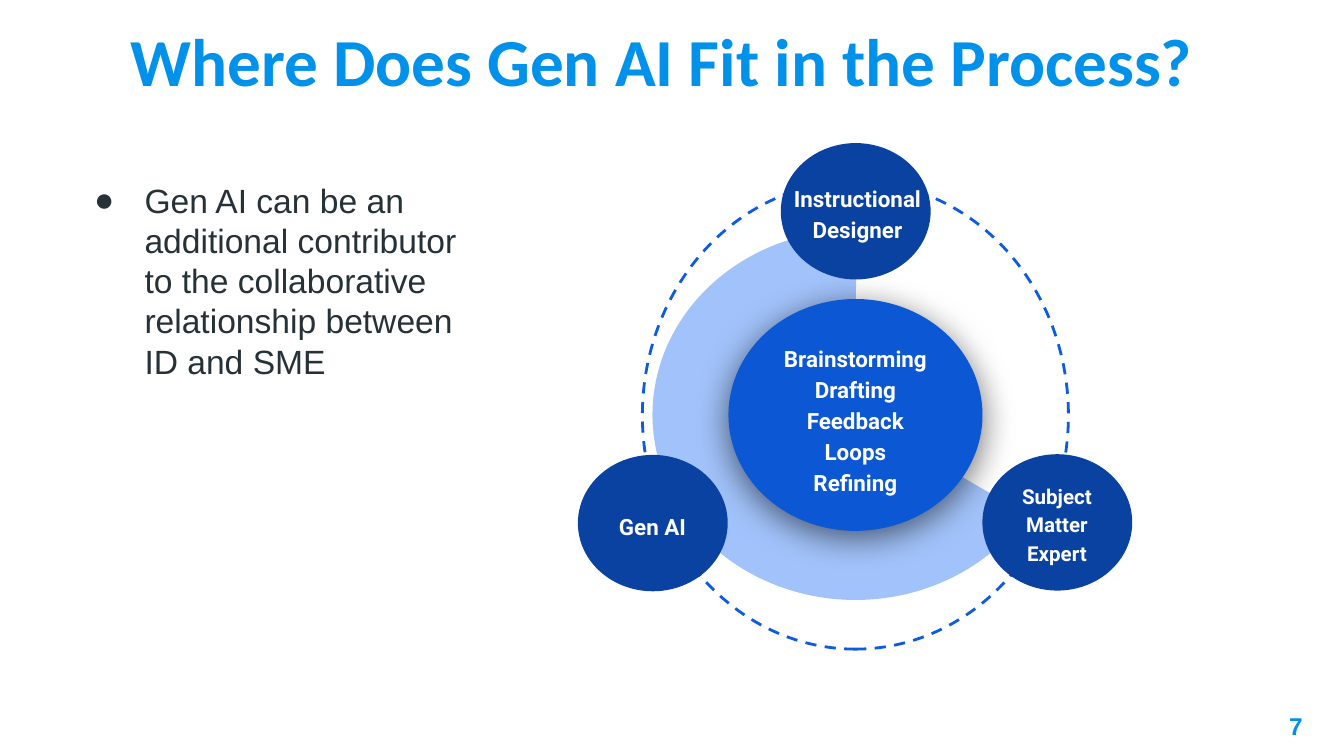
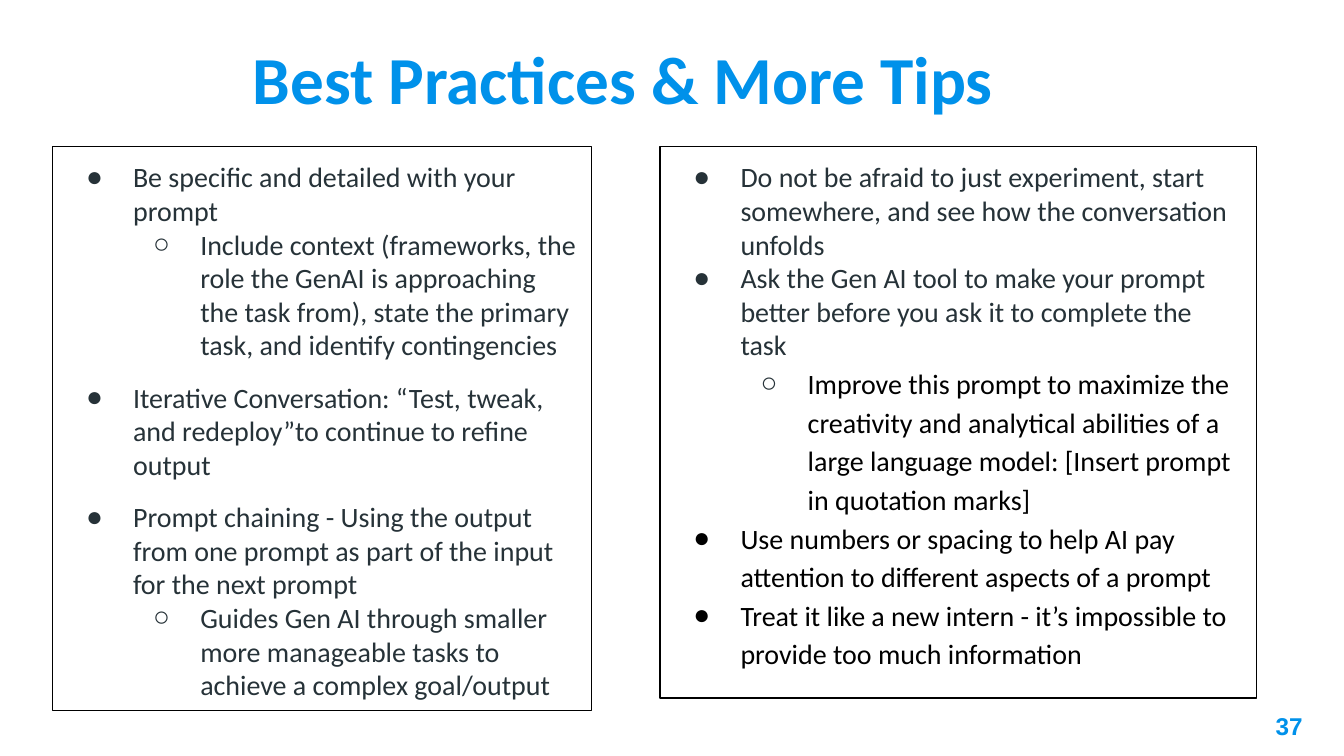
"""Build two slides on working with generative AI: its place in the process, and prompting tips."""

import dataclasses
import typing

import lxml.etree
import pptx
import pptx.dml.color
import pptx.enum.dml
import pptx.enum.shapes
import pptx.enum.text
import pptx.oxml.ns
import pptx.shapes.autoshape
import pptx.slide
import pptx.text.text
import pptx.util

PX = 4572
SLIDE_SIZE = (2000, 1125)
INSET = 20
INDENT = 100
PAGE_NUMBER_BOX = (1838, 1039, 120, 86)
BULLET_FONT = "Arial"
COLORS = {
    "accent": "0091EA",
    "ink": "263238",
    "black": "000000",
    "white": "FFFFFF",
    "ring": "0D5CDF",
    "arc": "A1C2FA",
    "hub": "0C57D3",
    "contributor": "0942A1",
}

Box = tuple[int, int, int, int]
Align = pptx.enum.text.PP_ALIGN
Anchor = pptx.enum.text.MSO_ANCHOR
Preset = pptx.enum.shapes.MSO_SHAPE


@dataclasses.dataclass(frozen=True)
class Item:
    text: str
    level: int = 0
    color: str = "ink"
    bullet: str = ""
    bullet_color: str = "ink"
    spacing: float = 1.0
    before: int = 0


@dataclasses.dataclass(frozen=True)
class Contributor:
    name: str
    circle: tuple[int, int]
    label: Box
    size: int = 12


@dataclasses.dataclass(frozen=True)
class Column:
    box: Box
    tips: tuple[Item, ...]


CONTRIBUTOR_SIZE = (223, 203)
CONTRIBUTORS = (
    Contributor("Instructional Designer", (1162, 213), (1155, 242, 242, 148)),
    Contributor("Gen AI", (860, 677), (892, 710, 158, 140)),
    Contributor("Subject Matter Expert", (1462, 676), (1487, 708, 172, 140), 11),
)
ACTIVITIES = ("Brainstorming", "Drafting", "Feedback Loops", "Refining")
ROLE = Item(
    "Gen AI can be an additional contributor to the collaborative "
    "relationship between ID and SME",
    bullet="●",
)
COLUMNS = (
    Column((78, 218, 802, 839), (
        Item("Be specific and detailed with your prompt", bullet="●"),
        Item("Include context (frameworks, the role the GenAI is approaching the task from), "
             "state the primary task, and identify contingencies", level=1, bullet="○"),
        Item("Iterative Conversation: “Test, tweak, and redeploy”to continue to refine output",
             bullet="●", before=10),
        Item("Prompt chaining - Using the output from one prompt as part of the input "
             "for the next prompt", bullet="●", before=10),
        Item("Guides Gen AI through smaller more manageable tasks to achieve "
             "a complex goal/output", level=1, bullet="○"),
    )),
    Column((982, 218, 888, 821), (
        Item("Do not be afraid to just experiment, start somewhere, and see how "
             "the conversation unfolds", bullet="●"),
        Item("Ask the Gen AI tool to make your prompt better before you ask it "
             "to complete the task", bullet="●"),
        Item("Improve this prompt to maximize the creativity and analytical abilities of "
             "a large language model: [Insert prompt in quotation marks]",
             level=1, color="black", bullet="○", spacing=1.15),
        Item("Use numbers or spacing to help AI pay attention to different aspects of a prompt",
             color="black", bullet="●", bullet_color="black", spacing=1.15),
        Item("Treat it like a new intern - it’s impossible to provide too much information",
             color="black", bullet="●", bullet_color="black", spacing=1.15),
    )),
)


def rgb(color: str) -> pptx.dml.color.RGBColor:
    return pptx.dml.color.RGBColor.from_string(COLORS[color])


def emu(lengths: typing.Iterable[int]) -> list[int]:
    return [length * PX for length in lengths]


def add_element(parent: typing.Any, tag: str, **attributes: str) -> typing.Any:
    return lxml.etree.SubElement(parent, pptx.oxml.ns.qn(tag), attributes)


def set_bullet(paragraph: pptx.text.text._Paragraph, item: Item, hanging: int) -> None:
    properties = paragraph._p.get_or_add_pPr()
    properties.set("marL", str(INDENT * (item.level + 1) * PX))
    properties.set("indent", str(-hanging * PX))
    bullet_color = add_element(properties, "a:buClr")
    add_element(bullet_color, "a:srgbClr", val=COLORS[item.bullet_color])
    add_element(properties, "a:buFont", typeface=BULLET_FONT)
    add_element(properties, "a:buChar", char=item.bullet)


def write_text(
    frame: pptx.text.text.TextFrame,
    items: typing.Iterable[Item],
    *,
    size: int,
    font: str,
    bold: bool = False,
    align: Align = Align.LEFT,
    anchor: Anchor = Anchor.TOP,
    hanging: int = 70,
) -> None:
    frame.word_wrap = True
    frame.auto_size = pptx.enum.text.MSO_AUTO_SIZE.NONE
    frame.vertical_anchor = anchor
    frame.margin_left = frame.margin_right = INSET * PX
    frame.margin_top = frame.margin_bottom = INSET * PX
    for index, item in enumerate(items):
        paragraph = frame.add_paragraph() if index else frame.paragraphs[0]
        paragraph.level = item.level
        if item.bullet:
            set_bullet(paragraph, item, hanging)
        paragraph.alignment = align
        paragraph.line_spacing = item.spacing
        paragraph.space_before = pptx.util.Pt(item.before)
        run = paragraph.add_run()
        run.text = item.text
        run.font.size = pptx.util.Pt(size)
        run.font.name = font
        run.font.bold = bold
        run.font.color.rgb = rgb(item.color)


def place(shape: typing.Any, box: Box) -> None:
    shape.left, shape.top, shape.width, shape.height = emu(box)


def add_titled_slide(
    deck: typing.Any, layout: int, title: str, title_box: Box, number: int
) -> pptx.slide.Slide:
    slide = deck.slides.add_slide(deck.slide_layouts[layout])
    place(slide.shapes.title, title_box)
    write_text(slide.shapes.title.text_frame, [Item(title, color="accent")],
               size=36, font="Calibri", bold=True, anchor=Anchor.BOTTOM)
    page_number = slide.shapes.add_textbox(*emu(PAGE_NUMBER_BOX))
    write_text(page_number.text_frame, [Item(str(number), color="accent")],
               size=13, font="Arial", bold=True, align=Align.RIGHT)
    return slide


def add_figure(
    slide: pptx.slide.Slide, preset: Preset, box: Box, fill: str | None = None
) -> pptx.shapes.autoshape.Shape:
    figure = slide.shapes.add_shape(preset, *emu(box))
    figure.shadow.inherit = False
    figure.line.fill.background()
    if fill:
        figure.fill.solid()
        figure.fill.fore_color.rgb = rgb(fill)
    else:
        figure.fill.background()
    return figure


def add_label(slide: pptx.slide.Slide, box: Box, lines: typing.Iterable[str], size: int) -> None:
    label = slide.shapes.add_textbox(*emu(box))
    write_text(label.text_frame, [Item(line, color="white", spacing=1.15) for line in lines],
               size=size, font="Roboto", bold=True, align=Align.CENTER, anchor=Anchor.MIDDLE)


def cast_shadow(figure: pptx.shapes.autoshape.Shape) -> None:
    effects = figure._element.spPr.find(pptx.oxml.ns.qn("a:effectLst"))
    shadow = add_element(effects, "a:outerShdw", blurRad=str(pptx.util.Pt(18)),
                         dist=str(pptx.util.Pt(4)), dir="5400000", algn="bl", rotWithShape="0")
    shade = add_element(shadow, "a:srgbClr", val=COLORS["black"])
    add_element(shade, "a:alpha", val="55000")


def draw_collaboration(slide: pptx.slide.Slide) -> None:
    ring = add_figure(slide, Preset.OVAL, (925, 301, 696, 634))
    ring.rotation = 270
    ring.line.color.rgb = rgb("ring")
    ring.line.width = pptx.util.Pt(1.5)
    ring.line.dash_style = pptx.enum.dml.MSO_LINE.DASH

    arc = add_figure(slide, Preset.PIE, (971, 342, 604, 551), "arc")
    for index, degrees in enumerate((30.2, 270.25)):
        arc.adjustments[index] = degrees * 0.6

    cast_shadow(add_figure(slide, Preset.OVAL, (1084, 445, 378, 345), "hub"))
    add_label(slide, (1133, 503, 280, 240), ACTIVITIES, 12)

    for contributor in CONTRIBUTORS:
        add_figure(slide, Preset.OVAL, contributor.circle + CONTRIBUTOR_SIZE, "contributor")
        add_label(slide, contributor.label, [contributor.name], contributor.size)


def build_process_slide(deck: typing.Any) -> None:
    slide = add_titled_slide(deck, 1, "Where Does Gen AI Fit in the Process?",
                             (174, 47, 1710, 122), 7)
    draw_collaboration(slide)
    role = slide.placeholders[1]
    place(role, (95, 247, 658, 664))
    write_text(role.text_frame, [ROLE], size=18, font="Arial", hanging=75)


def build_tips_slide(deck: typing.Any) -> None:
    slide = add_titled_slide(deck, 3, "Best Practices & More Tips", (356, 42, 1514, 154), 37)
    for index, column in enumerate(COLUMNS, start=1):
        tips = slide.placeholders[index]
        place(tips, column.box)
        tips.line.color.rgb = rgb("black")
        tips.line.width = pptx.util.Pt(0.75)
        write_text(tips.text_frame, column.tips, size=15, font="Calibri")


def main() -> None:
    deck = pptx.Presentation()
    deck.slide_width, deck.slide_height = emu(SLIDE_SIZE)
    build_process_slide(deck)
    build_tips_slide(deck)
    deck.save("out.pptx")


if __name__ == "__main__":
    main()
